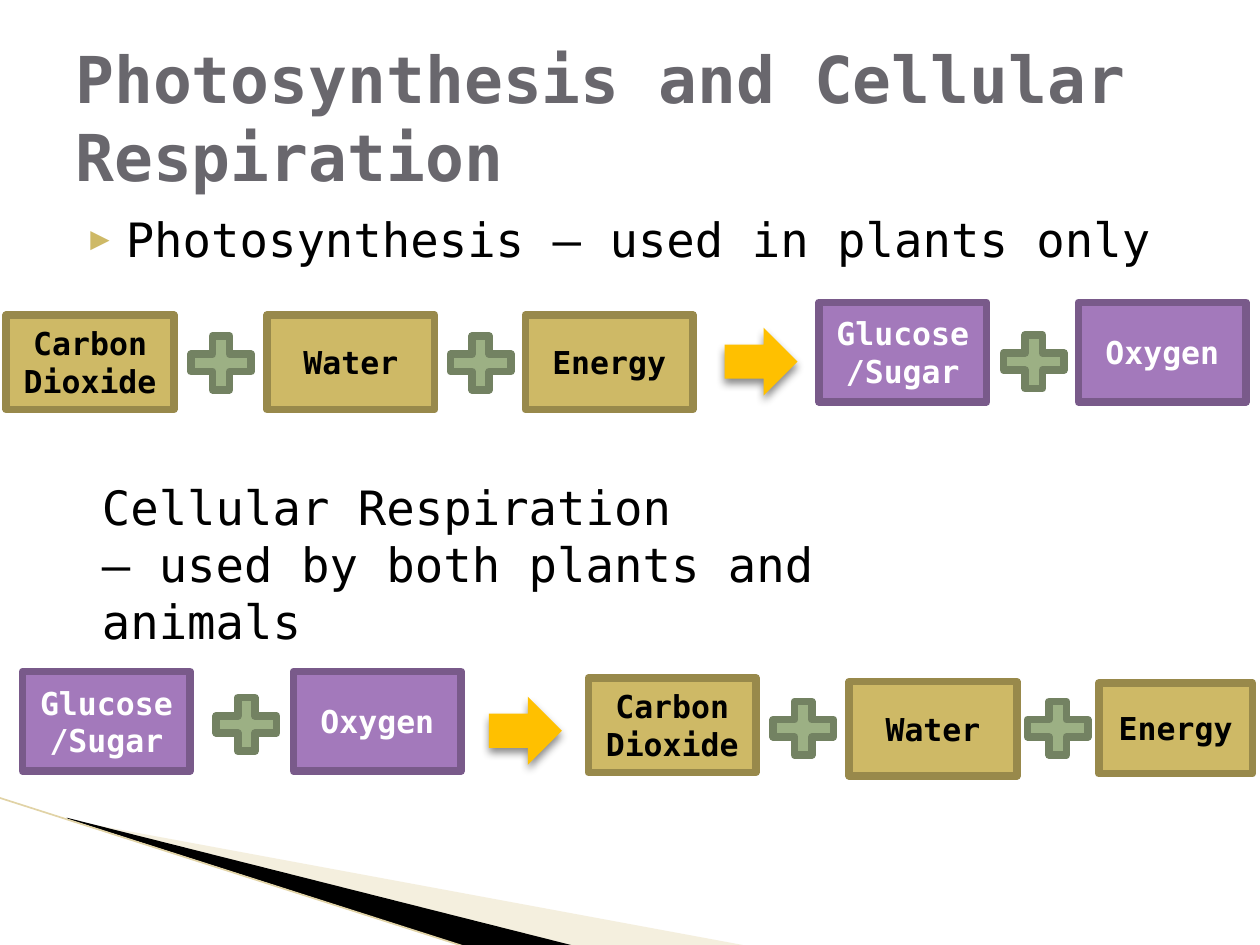
"""Build a slide with the photosynthesis and cellular respiration equations."""
from dataclasses import dataclass

from lxml.etree import SubElement
from pptx import Presentation
from pptx.dml.color import RGBColor
from pptx.enum.shapes import MSO_CONNECTOR as CONN, MSO_SHAPE as SHAPE
from pptx.enum.text import MSO_ANCHOR as ANCHOR, PP_ALIGN as ALIGN
from pptx.oxml.ns import qn
from pptx.util import Inches, Pt


@dataclass(frozen=True)
class Theme:
    font: str = "DejaVu Sans Mono"
    title: str = "69676D"
    text: str = "000000"
    light: str = "FFFFFF"
    gold: str = "CEB966"
    gold_edge: str = "98894B"
    purple: str = "A379BB"
    purple_edge: str = "795A8A"
    green: str = "9CB084"
    green_edge: str = "738262"
    arrow: str = "FFC000"
    sand: str = "E4D7AD"
    sand_line: str = "E1D3A6"
    title_size: float = 36.9
    body_size: float = 27
    box_size: float = 18
    edge: float = 4.33


T = Theme()
GOLD = (T.gold, T.gold_edge, T.text)
PURPLE = (T.purple, T.purple_edge, T.light)

BOXES = [
    ("Carbon Dioxide", GOLD, (0.05, 2.5, 1.33, 0.75)),
    ("Water", GOLD, (2.12, 2.5, 1.33, 0.75)),
    ("Energy", GOLD, (4.17, 2.5, 1.33, 0.75)),
    ("Glucose/Sugar", PURPLE, (6.5, 2.4, 1.33, 0.79)),
    ("Oxygen", PURPLE, (8.56, 2.4, 1.33, 0.79)),
    ("Glucose/Sugar", PURPLE, (0.18, 5.33, 1.33, 0.79)),
    ("Oxygen", PURPLE, (2.33, 5.33, 1.33, 0.79)),
    ("Carbon Dioxide", GOLD, (4.67, 5.38, 1.33, 0.75)),
    ("Water", GOLD, (6.74, 5.41, 1.33, 0.75)),
    ("Energy", GOLD, (8.72, 5.42, 1.22, 0.72)),
]
PLUSES = [(1.43, 2.59), (3.49, 2.59), (7.88, 2.58),
          (1.63, 5.46), (6.05, 5.49), (8.07, 5.49)]
ARROWS = [(5.75, 2.6), (3.88, 5.53)]


def rgb(color):
    return RGBColor.from_string(color)


def add_run(p, text, size, color, bold=False):
    r = p.add_run()
    r.text = text
    r.font.name, r.font.size, r.font.bold = T.font, Pt(size), bold
    r.font.color.rgb = rgb(color)


def add_text(s, at, lines, size, color, bold=False, anchor=ANCHOR.TOP):
    tf = s.shapes.add_textbox(*map(Inches, at)).text_frame
    tf.word_wrap = True
    tf.vertical_anchor = anchor
    for i, line in enumerate(lines):
        p = tf.add_paragraph() if i else tf.paragraphs[0]
        add_run(p, line, size, color, bold)
    return tf


def add_bullet(p):
    pPr = p._p.get_or_add_pPr()
    pPr.set("marL", str(Inches(0.4)))
    pPr.set("indent", str(Inches(-0.28)))
    SubElement(SubElement(pPr, qn("a:buClr")), qn("a:srgbClr"), val=T.gold)
    SubElement(pPr, qn("a:buSzPct"), val="68000")
    SubElement(pPr, qn("a:buFont"), typeface=T.font)
    SubElement(pPr, qn("a:buChar"), char="▶")


def paint(sp, fill, edge=None):
    sp.shadow.inherit = False
    sp.fill.solid()
    sp.fill.fore_color.rgb = rgb(fill)
    if edge:
        sp.line.color.rgb = rgb(edge)
        sp.line.width = Pt(T.edge)
    else:
        sp.line.fill.background()


def add_shape(s, kind, at, fill, edge=None):
    sp = s.shapes.add_shape(kind, *map(Inches, at))
    paint(sp, fill, edge)
    return sp


def add_box(s, label, style, at):
    fill, edge, color = style
    tf = add_shape(s, SHAPE.RECTANGLE, at, fill, edge).text_frame
    tf.word_wrap = True
    tf.vertical_anchor = ANCHOR.MIDDLE
    p = tf.paragraphs[0]
    p.alignment = ALIGN.CENTER
    add_run(p, label, T.box_size, color, bold=True)


def add_arrow(s, x, y):
    sp = add_shape(s, SHAPE.RIGHT_ARROW, (x, y, 0.58, 0.54), T.arrow)
    effects = sp._element.spPr.find(qn("a:effectLst"))
    shadow = SubElement(effects, qn("a:outerShdw"), blurRad=str(Pt(5)),
                        dist=str(Pt(3)), dir="5400000", rotWithShape="0")
    color = SubElement(shadow, qn("a:srgbClr"), val="000000")
    SubElement(color, qn("a:alpha"), val="45000")


def add_wedge(s, points, fill, alpha=100):
    start, *rest = [(Inches(x), Inches(y)) for x, y in points]
    builder = s.shapes.build_freeform(*start)
    builder.add_line_segments(rest)
    sp = builder.convert_to_shape()
    paint(sp, fill)
    color = sp._element.spPr.find(qn("a:solidFill")).find(qn("a:srgbClr"))
    SubElement(color, qn("a:alpha"), val=str(alpha * 1000))


def add_line(s, start, end):
    cx = s.shapes.add_connector(CONN.STRAIGHT, *map(Inches, start + end))
    cx.line.color.rgb = rgb(T.sand_line)
    cx.line.width = Pt(0.95)
    SubElement(cx._element.spPr, qn("a:effectLst"))


def main():
    prs = Presentation()
    prs.slide_width, prs.slide_height = Inches(10), Inches(7.5)
    s = prs.slides.add_slide(prs.slide_layouts[6])

    add_wedge(s, [(0.55, 6.51), (5.95, 7.51), (4.56, 7.51), (0.55, 6.5)], T.sand, 40)
    add_wedge(s, [(0.53, 6.49), (4.57, 7.51), (3.72, 7.52), (0.54, 6.5)], T.text)
    add_line(s, (-0.01, 6.33), (3.71, 7.52))

    body = add_text(s, (0.5, 1.62, 9, 0.63), ["Photosynthesis – used in plants only"],
                    T.body_size, T.text)
    add_bullet(body.paragraphs[0])
    add_text(s, (0.5, 0.3, 9, 1.25), ["Photosynthesis and Cellular Respiration"],
             T.title_size, T.title, bold=True, anchor=ANCHOR.MIDDLE)

    for label, style, at in BOXES:
        add_box(s, label, style, at)
    add_text(s, (0.71, 3.75, 6.49, 1.01),
             ["Cellular Respiration", "– used by both plants and animals"],
             T.body_size, T.text)
    for x, y in PLUSES:
        add_shape(s, SHAPE.MATH_PLUS, (x, y, 0.65, 0.58), T.green, T.green_edge)
    for x, y in ARROWS:
        add_arrow(s, x, y)

    prs.save("out.pptx")


if __name__ == "__main__":
    main()
